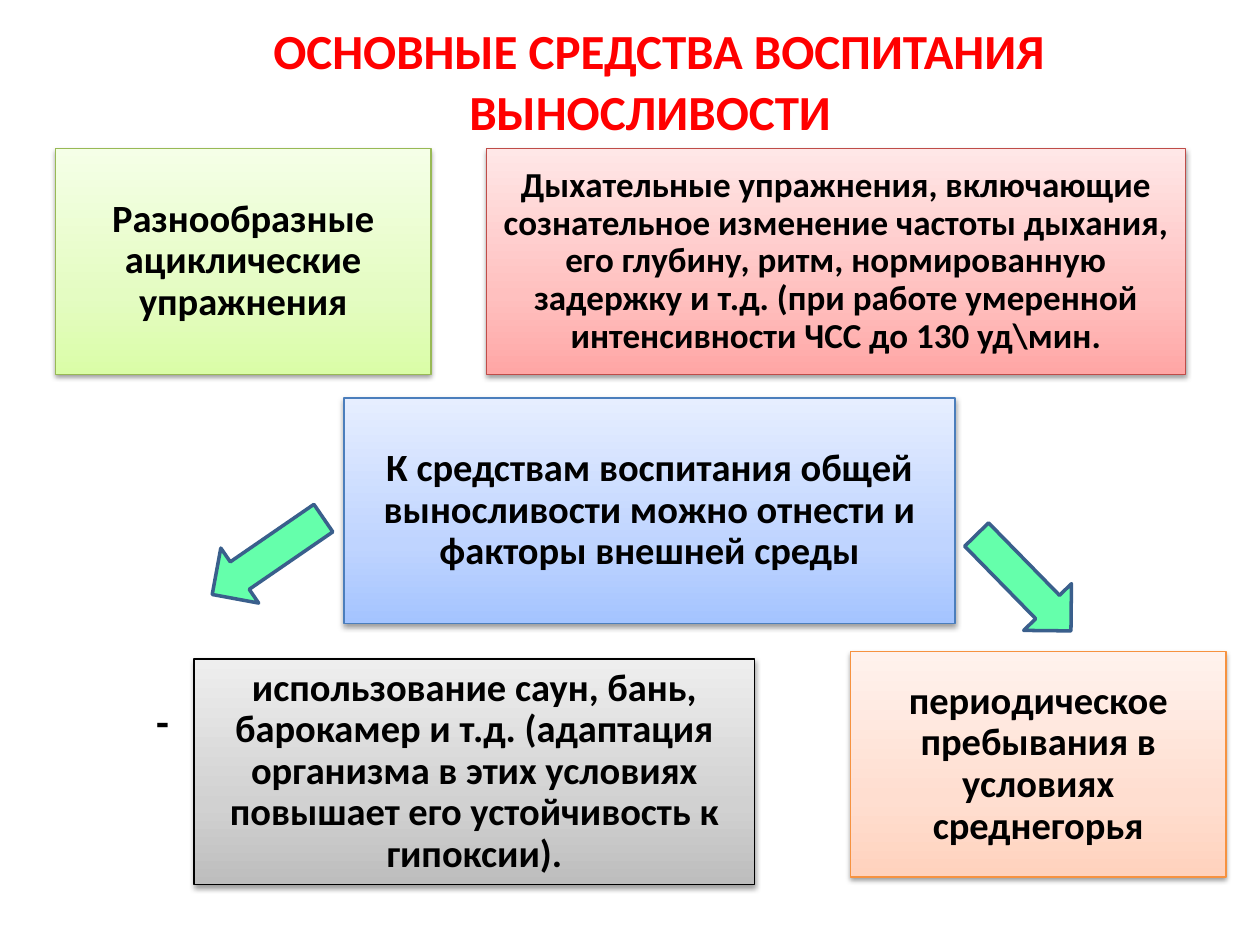
from copy import deepcopy

from lxml import etree
from pptx import Presentation
from pptx.dml.color import RGBColor
from pptx.enum import shapes, text
from pptx.oxml import parse_xml
from pptx.oxml.ns import nsdecls, qn
from pptx.util import Inches, Pt

BLACK = RGBColor(0, 0, 0)
RED = RGBColor(0xFF, 0, 0)
BLUE = RGBColor(0x4F, 0x81, 0xBD)
MINT = RGBColor(0x65, 0xFF, 0xAB)
NAVY = RGBColor(0x3A, 0x5F, 0x8C)
GREENS = [RGBColor.from_string(c) for c in ("DAFDA7", "E4FCC2", "F5FFE7", "98B955")]
PINKS = [RGBColor.from_string(c) for c in ("FFA6A5", "FFC0BF", "FFE7E7", "BF4C48")]
BLUES = [RGBColor.from_string(c) for c in ("A4C4FF", "BFD4FF", "E6EEFF", "4B7EBC")]
GREYS = [RGBColor.from_string(c) for c in ("BDBDBD", "D1D1D1", "EEEEEE", "000000")]
PEACH = [RGBColor.from_string(c) for c in ("FFD2BD", "FFDED0", "FFF2ED", "F69240")]

SHADE = (
    f'<a:outerShdw {nsdecls("a")} blurRad="39370" dist="20320" dir="5400000" rotWithShape="0">'
    '<a:srgbClr val="000000"><a:alpha val="38000"/></a:srgbClr></a:outerShdw>'
)

CARDS = [
    ((0.44, 1.18, 2.98, 1.79), GREENS, 22, "Разнообразные ациклические упражнения"),
    ((3.86, 1.18, 5.55, 1.79), PINKS, 20,
     "Дыхательные упражнения, включающие сознательное изменение частоты дыхания, "
     "его глубину, ритм, нормированную задержку и т.д. "
     "(при работе умеренной интенсивности ЧСС до 130 уд\\мин."),
    ((2.73, 3.16, 4.85, 1.79), BLUES, 22,
     "К средствам воспитания общей выносливости можно отнести и факторы внешней среды"),
    ((1.54, 5.23, 4.45, 1.79), GREYS, 22,
     "использование саун, бань, барокамер и т.д. (адаптация организма в этих условиях "
     "повышает его устойчивость к гипоксии)."),
    ((6.75, 5.17, 2.98, 1.79), PEACH, 22, "периодическое пребывания в условиях среднегорья"),
]
ARROWS = [((7.59, 4.36, 1.07, 0.53), 45.6), ((1.59, 4.15, 1.07, 0.53), 145.5)]


def put(item, **vals):
    """Set each given attribute on the item."""
    for key, val in vals.items():
        setattr(item, key, val)


def write(para, words, size, color, name="Calibri"):
    """Add a bold run to the paragraph."""
    run = para.add_run()
    run.text = words
    put(run.font, size=Pt(size), name=name, bold=True)
    run.font.color.rgb = color


def label(slide, box, runs, align):
    """Place a wrapping text box that holds one paragraph."""
    frame = slide.shapes.add_textbox(*map(Inches, box)).text_frame
    frame.word_wrap = True
    para = frame.paragraphs[0]
    para.alignment = align
    for run in runs:
        write(para, *run)


def shade(fill, tints):
    """Fill from bottom to top through three tints."""
    fill.gradient()
    fill.gradient_angle = 90
    stops = fill._fill._gradFill.find(qn("a:gsLst"))
    stops.append(deepcopy(stops[-1]))
    for stop, tint, place in zip(fill.gradient_stops, tints, (0, 0.35, 1)):
        stop.color.rgb = tint
        stop.position = place


def card(slide, box, tones, size, words):
    """Place a shaded card with centred text."""
    shape = slide.shapes.add_shape(shapes.MSO_SHAPE.RECTANGLE, *map(Inches, box))
    *tints, edge = tones
    shade(shape.fill, tints)
    shape.line.color.rgb = edge
    shape.line.width = Pt(0.75)
    shape.shadow.inherit = False
    shape._element.spPr.find(qn("a:effectLst")).append(parse_xml(SHADE))
    frame = shape.text_frame
    put(frame, word_wrap=True, vertical_anchor=text.MSO_ANCHOR.MIDDLE)
    pad = Inches(size / 250)
    put(frame, margin_left=pad, margin_right=pad, margin_top=pad, margin_bottom=pad)
    para = frame.paragraphs[0]
    put(para, alignment=text.PP_ALIGN.CENTER, line_spacing=0.9)
    write(para, words, size, BLACK)


def arrow(slide, box, turn):
    """Place a turned block arrow."""
    shape = slide.shapes.add_shape(shapes.MSO_SHAPE.RIGHT_ARROW, *map(Inches, box))
    shape.rotation = turn
    shape.shadow.inherit = False
    shape.fill.solid()
    shape.fill.fore_color.rgb = MINT
    shape.line.color.rgb = NAVY
    shape.line.width = Pt(2)


def main():
    """Build and save the slide."""
    deck = Presentation()
    put(deck, slide_width=Inches(10), slide_height=Inches(7.5))
    slide = deck.slides.add_slide(deck.slide_layouts[6])
    title = [(" ", 36, BLUE, "Arial"),
             ("ОСНОВНЫЕ СРЕДСТВА ВОСПИТАНИЯ ВЫНОСЛИВОСТИ", 28, RED)]
    label(slide, (0.91, 0, 8.5, 1.18), title, text.PP_ALIGN.CENTER)
    label(slide, (1.14, 5.47, 0.4, 0.5), [("-", 24, BLACK)], text.PP_ALIGN.LEFT)
    for item in CARDS:
        card(slide, *item)
    for item in ARROWS:
        arrow(slide, *item)
    deck.save("out.pptx")


if __name__ == "__main__":
    main()
